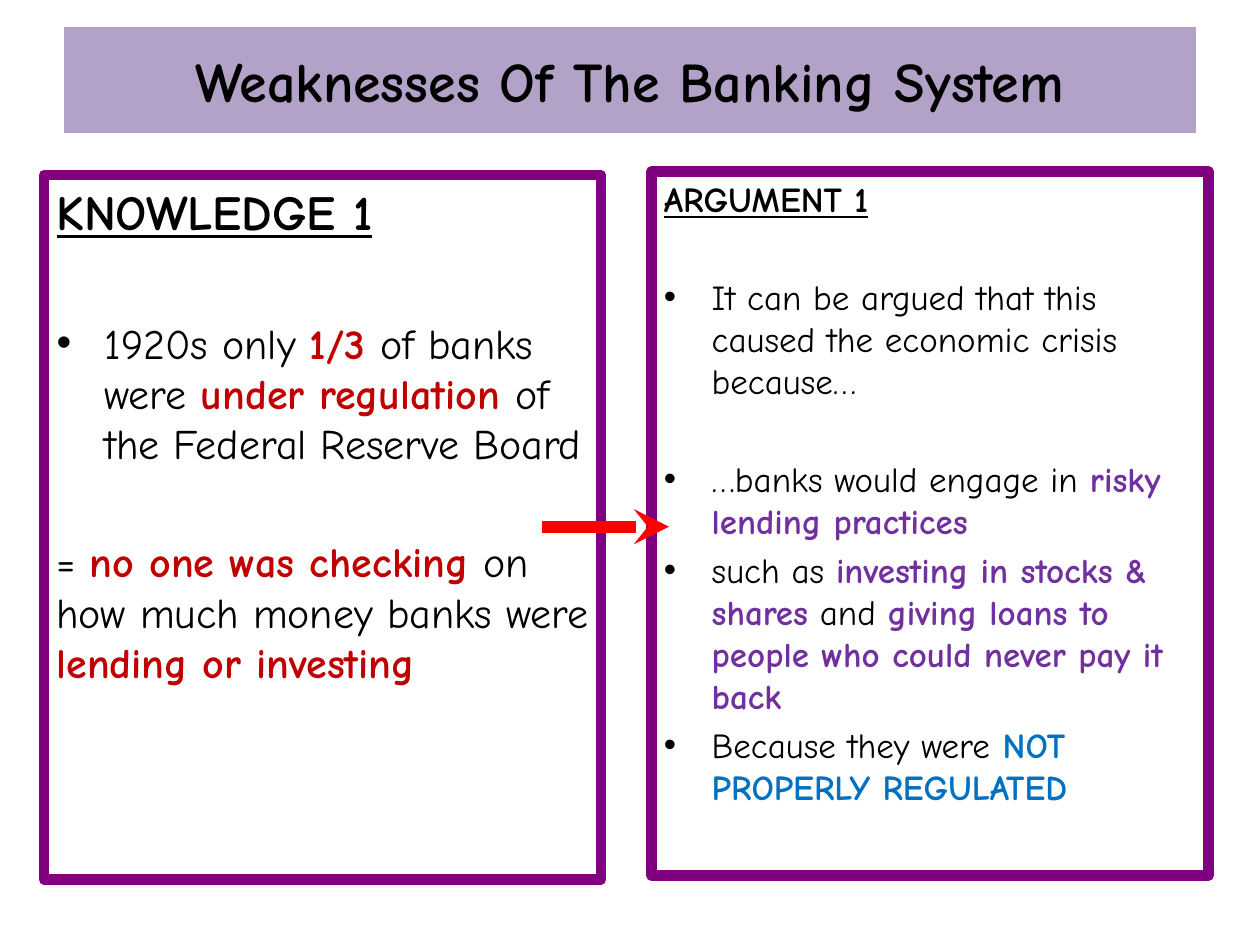
"""Builds a slide on the weaknesses of the 1920s banking system."""
from lxml.etree import SubElement
from pptx import Presentation
from pptx.dml.color import RGBColor
from pptx.enum.shapes import MSO_CONNECTOR
from pptx.enum.text import MSO_ANCHOR, MSO_AUTO_SIZE, PP_ALIGN
from pptx.oxml.ns import qn
from pptx.util import Inches, Pt

COLORS = {
    "black": "000000", "white": "FFFFFF", "lilac": "B3A2C7", "frame": "800080",
    "red": "C00000", "purple": "7030A0", "blue": "0070C0", "arrow": "FF0000",
}
FONT = "Comic Neue"
INDENT = Inches(0.38)


def color(name):
    return RGBColor.from_string(COLORS[name])


def add_run(paragraph, text, size, name="black", bold=False, underline=False):
    run = paragraph.add_run()
    run.text = text
    run.font.name = FONT
    run.font.size = Pt(size)
    run.font.bold = bold
    run.font.underline = underline
    run.font.color.rgb = color(name)


PANELS = [
    (0.35, 1.39, "KNOWLEDGE 1", 28, 24, [
        (True, 44, [("1920s only ", "black"), ("1/3 ", "red"), ("of banks were ", "black"),
                    ("under regulation ", "red"), ("of the Federal Reserve Board", "black")]),
        (False, 38.4, [("= ", "black"), ("no one was checking ", "red"),
                       ("on how much money banks were ", "black"),
                       ("lending or investing", "red")]),
    ]),
    (5.17, 1.36, "ARGUMENT 1", 20, 20, [
        (True, 32, [("It can be argued that this caused the economic crisis because…", "black")]),
        (True, 32, [("…banks would engage in ", "black"), ("risky lending practices", "purple")]),
        (True, 4, [("such as ", "black"), ("investing in stocks & shares", "purple"),
                   (" and ", "black"),
                   ("giving loans to people who could never pay it back", "purple")]),
        (True, 4, [("Because they were", "black"), (" NOT PROPERLY REGULATED", "blue")]),
    ]),
]

deck = Presentation()
deck.slide_width, deck.slide_height = Inches(10), Inches(7.5)
slide = deck.slides.add_slide(deck.slide_layouts[5])

title = slide.shapes.title
title.left, title.top = Inches(0.5), Inches(0.21)
title.width, title.height = Inches(9), Inches(0.85)
title.fill.solid()
title.fill.fore_color.rgb = color("lilac")
title.line.color.rgb = color("white")
title.line.width = Pt(0.75)
title.text_frame.vertical_anchor = MSO_ANCHOR.MIDDLE
title.text_frame.auto_size = MSO_AUTO_SIZE.NONE
headline = title.text_frame.paragraphs[0]
headline.alignment = PP_ALIGN.CENTER
add_run(headline, "Weaknesses Of The Banking System", 32, bold=True)

for left, top, heading, heading_size, body_size, points in PANELS:
    panel = slide.shapes.add_textbox(Inches(left), Inches(top), Inches(4.42), Inches(5.59))
    panel.line.color.rgb = color("frame")
    panel.line.width = Pt(6)
    frame = panel.text_frame
    frame.word_wrap = True
    heading_line = frame.paragraphs[0]
    heading_line.space_before = Pt(0.2 * heading_size)
    add_run(heading_line, heading, heading_size, bold=True, underline=True)
    for bulleted, gap, phrases in points:
        point = frame.add_paragraph()
        point.space_before = Pt(gap)
        if bulleted:
            properties = point._p.get_or_add_pPr()
            properties.set("marL", str(INDENT))
            properties.set("indent", str(-INDENT))
            SubElement(properties, qn("a:buFont")).set("typeface", "Arial")
            SubElement(properties, qn("a:buChar")).set("char", "•")
        for text, name in phrases:
            add_run(point, text, body_size, name, bold=name != "black")

arrow = slide.shapes.add_connector(
    MSO_CONNECTOR.STRAIGHT, Inches(4.3), Inches(4.18), Inches(5.31), Inches(4.18))
arrow.line.color.rgb = color("arrow")
arrow.line.width = Pt(6.75)
SubElement(arrow.line._get_or_add_ln(), qn("a:tailEnd")).set("type", "stealth")
SubElement(arrow._element.spPr, qn("a:effectLst"))

deck.save("out.pptx")
